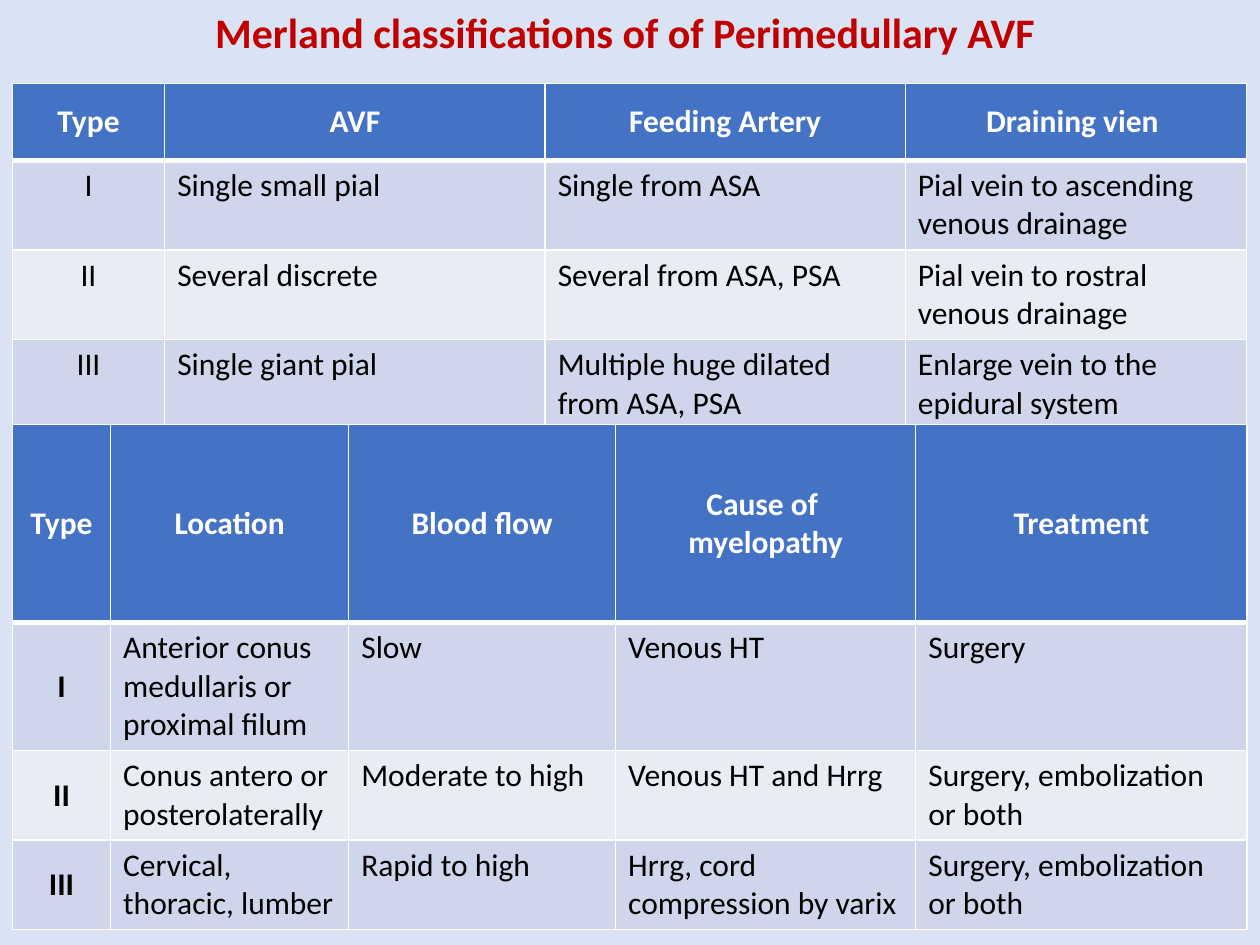
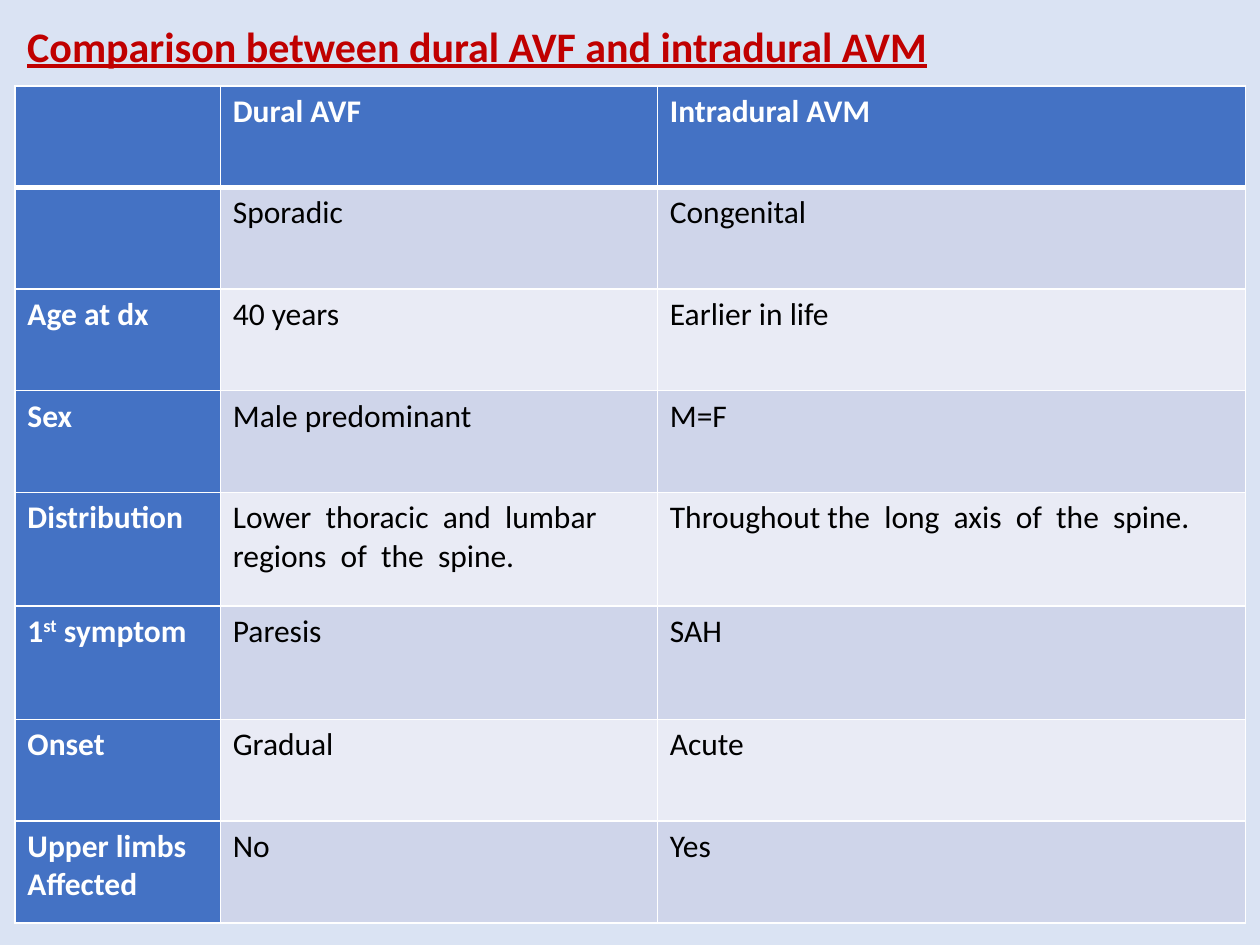
import lxml.etree
import pptx
import pptx.dml.color
import pptx.enum.text
import pptx.oxml.ns
import pptx.util

Cm = pptx.util.Cm
Pt = pptx.util.Pt
ALIGN = pptx.enum.text.PP_ALIGN
ANCHOR = pptx.enum.text.MSO_ANCHOR

COLOURS = {
    "page": "DAE3F3",
    "title": "C00000",
    "header": "4472C4",
    "header_text": "FFFFFF",
    "text": "000000",
    "band_dark": "CFD5EA",
    "band_light": "E9EBF5",
    "border": "FFFFFF",
}
FONT = "Calibri"
TITLE_SIZE, TABLE_SIZE = 24, 18
THIN, THICK = 1, 3

MERLAND_ANATOMY = [
    ["Type", "AVF", "Feeding Artery", "Draining vien "],
    ["I", "Single small pial", "Single from ASA", "Pial vein to ascending venous drainage"],
    ["II", "Several discrete", "Several from ASA, PSA", "Pial vein to rostral venous drainage"],
    ["III", "Single giant pial", "Multiple huge dilated from ASA, PSA",
     "Enlarge vein to the epidural system"],
]
MERLAND_CLINICAL = [
    ["Type", "Location", "Blood flow", "Cause of  myelopathy", "Treatment"],
    ["I", "Anterior conus medullaris or proximal filum", "Slow", "Venous HT", "Surgery"],
    ["II", "Conus antero or posterolaterally", "Moderate to high", "Venous HT and Hrrg",
     "Surgery, embolization or both"],
    ["III", "Cervical, thoracic, lumber", "Rapid to high", "Hrrg, cord compression by varix",
     "Surgery, embolization or both"],
]
COMPARISON = [
    ["", "Dural AVF", "Intradural AVM"],
    ["", "Sporadic", "Congenital"],
    ["Age at dx", "40 years", "Earlier in life"],
    ["Sex", "Male predominant", "M=F"],
    ["Distribution", "Lower  thoracic  and  lumbar  regions  of  the  spine.",
     "Throughout the  long  axis  of  the  spine."],
    ["1^st^ symptom", "Paresis", "SAH"],
    ["Onset", "Gradual", "Acute"],
    ["Upper limbs\nAffected", "No", "Yes"],
]


def rgb(name):
    return pptx.dml.color.RGBColor.from_string(COLOURS[name])


def write_text(frame, text, size, colour, bold, align=ALIGN.LEFT, underline=False):
    frame.text = text.replace("^", "")
    for para, line in zip(frame.paragraphs, text.split("\n")):
        para.alignment = align
        parts = line.split("^")
        if len(parts) > 1:
            para.text = ""
            for part in parts:
                para.add_run().text = part
        for index, span in enumerate(para.runs):
            span.font.name = FONT
            span.font.size = Pt(size)
            span.font.bold = bold
            span.font.underline = underline
            span.font.color.rgb = rgb(colour)
            if index % 2:
                span.font._element.set("baseline", "30000")


def add_page(deck):
    page = deck.slides.add_slide(deck.slide_layouts[6])
    page.background.fill.solid()
    page.background.fill.fore_color.rgb = rgb("page")
    return page


def add_title(page, box, text, align, anchor, underline=False, line_spacing=1.0):
    frame = page.shapes.add_textbox(*map(Cm, box)).text_frame
    frame.word_wrap = True
    frame.vertical_anchor = anchor
    write_text(frame, text, TITLE_SIZE, "title", True, align, underline)
    frame.paragraphs[0].line_spacing = line_spacing


def set_borders(cell, row):
    properties = cell._tc.get_or_add_tcPr()
    widths = {"L": THIN, "R": THIN, "T": THICK if row == 1 else THIN, "B": THIN if row else THICK}
    for side, width in widths.items():
        line = lxml.etree.SubElement(
            properties, pptx.oxml.ns.qn("a:ln" + side), w=str(int(Pt(width))))
        fill = lxml.etree.SubElement(line, pptx.oxml.ns.qn("a:solidFill"))
        lxml.etree.SubElement(fill, pptx.oxml.ns.qn("a:srgbClr"), val=COLOURS["border"])


def add_grid(page, corner, widths, heights, rows, style_cell):
    size = (sum(widths), sum(heights))
    table = page.shapes.add_table(len(rows), len(widths), *map(Cm, corner + size)).table
    table.horz_banding = False
    for column, width in zip(table.columns, widths):
        column.width = Cm(width)
    for row, height in zip(table.rows, heights):
        row.height = Cm(height)
    for row, texts in enumerate(rows):
        for column, text in enumerate(texts):
            cell = table.cell(row, column)
            header, bold, align, anchor = style_cell(row, column)
            band = "band_dark" if row % 2 else "band_light"
            set_borders(cell, row)
            cell.fill.solid()
            cell.fill.fore_color.rgb = rgb("header" if header else band)
            cell.vertical_anchor = anchor
            colour = "header_text" if header else "text"
            write_text(cell.text_frame, text, TABLE_SIZE, colour, bold, align)


def anatomy_style(row, column):
    header = row == 0
    align = ALIGN.CENTER if header or column == 0 else ALIGN.LEFT
    return header, header, align, ANCHOR.MIDDLE if header else ANCHOR.TOP


def clinical_style(row, column):
    heading = row == 0 or column == 0
    align, anchor = (ALIGN.CENTER, ANCHOR.MIDDLE) if heading else (ALIGN.LEFT, ANCHOR.TOP)
    return row == 0, heading, align, anchor


def comparison_style(row, column):
    heading = row == 0 or column == 0
    return heading, heading, ALIGN.LEFT, ANCHOR.TOP


def build_merland(deck):
    page = add_page(deck)
    add_grid(page, (0.25, 1.68), (3.07, 7.67, 7.26, 6.88), (1.55, 1.78, 1.78, 1.78),
             MERLAND_ANATOMY, anatomy_style)
    add_grid(page, (0.25, 8.56), (1.98, 4.8, 5.38, 6.05, 6.68), (3.99, 2.54, 1.8, 1.8),
             MERLAND_CLINICAL, clinical_style)
    add_title(page, (3.53, 0, 18.34, 2.24), "Merland classifications of of Perimedullary AVF ",
              ALIGN.CENTER, ANCHOR.TOP)


def build_comparison(deck):
    page = add_page(deck)
    add_title(page, (0.3, 0.46, 21.9, 1.04), "Comparison between dural AVF and intradural AVM",
              ALIGN.LEFT, ANCHOR.MIDDLE, underline=True, line_spacing=0.9)
    heights = [2.29 if row in (4, 5) else 2.05 for row in range(len(COMPARISON))]
    add_grid(page, (0.3, 1.73), (4.14, 8.81, 11.86), heights, COMPARISON, comparison_style)


def main():
    deck = pptx.Presentation()
    deck.slide_width, deck.slide_height = Cm(25.4), Cm(19.05)
    build_merland(deck)
    build_comparison(deck)
    deck.save("out.pptx")


if __name__ == "__main__":
    main()
